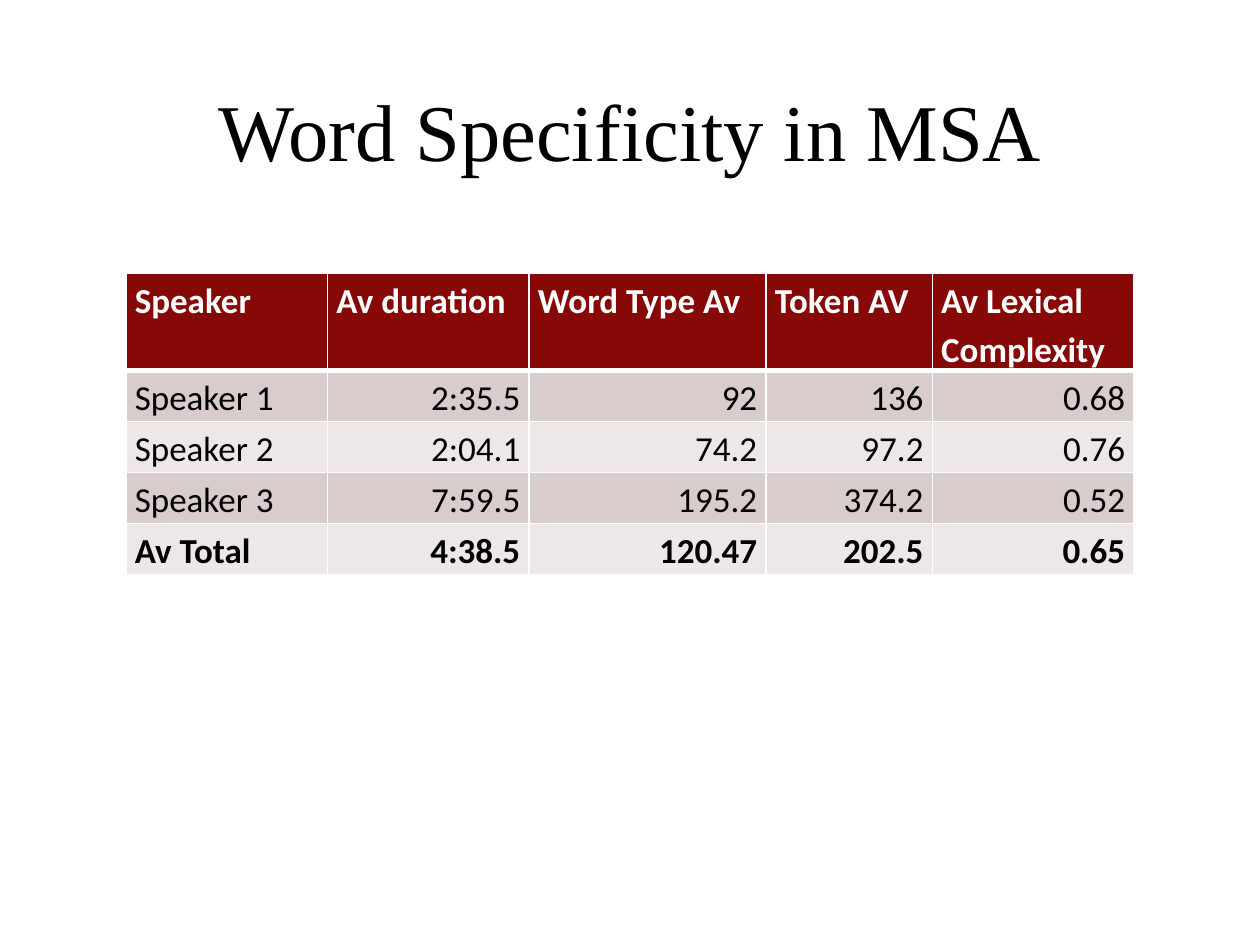
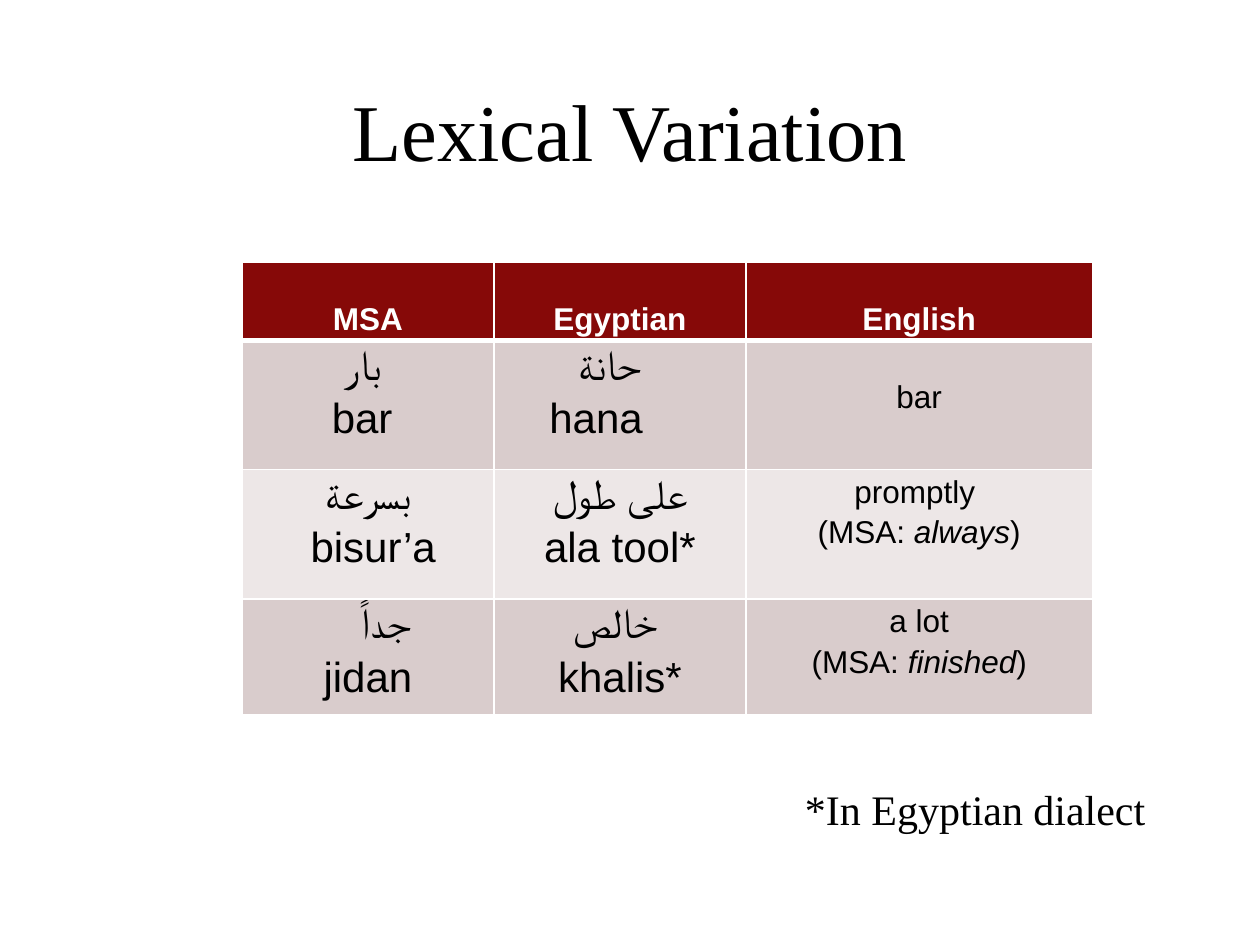
"""Build two slides of word tables that share one title style and one table style."""
from pptx import Presentation as Deck
from pptx.dml.color import RGBColor as Rgb
from pptx.enum.text import MSO_ANCHOR as Anchor, PP_ALIGN as Align
from pptx.oxml import parse_xml as parse
from pptx.oxml.ns import nsdecls
from pptx.util import Inches, Pt

theme = dict(
    ink="000000", white="FFFFFF", head="860908", bands=("D9CCCC", "EDE7E7"),
    serif="Times New Roman", sans="Arial", body="Calibri",
    title=Pt(46), large=Pt(24), mid=Pt(20), small=Pt(18),
    thin=Pt(1), thick=Pt(3), space=1.15,
)
deck = Deck()
wide, high = deck.slide_width, deck.slide_height = Inches(10), Inches(7.5)
col, row = wide / 100, high / 100


def put(frame, lines, look, **box):
    """Write lines into a frame; text between underscores is italic."""
    for key, val in box.items():
        setattr(frame, key, val)
    for num, (text, more) in enumerate(lines):
        para = frame.add_paragraph() if num else frame.paragraphs[0]
        form = {**look, **more}
        for key in ("alignment", "line_spacing"):
            setattr(para, key, form.get(key))
        for key in ("marL", "rtl"):
            if key in form:
                para._p.get_or_add_pPr().set(key, str(int(form[key])))
        for part, bit in enumerate(text.split("_")):
            run = para.add_run()
            run.text = bit
            for key in ("name", "size", "bold"):
                setattr(run.font, key, form.get(key))
            run.font.italic = part % 2 == 1
            run.font.color.rgb = Rgb.from_string(form["ink"])


def grid(slide, left, top, cols, rows, cells, look):
    """Draw a table whose cells hold (lines, top margin) pairs."""
    spans = [round(n * col) for n in cols], [round(n * row) for n in rows]
    table = slide.shapes.add_table(
        len(rows), len(cols), round(left * col), round(top * row),
        sum(spans[0]), sum(spans[1])).table
    for span, val in zip(table.columns, spans[0]):
        span.width = val
    for span, val in zip(table.rows, spans[1]):
        span.height = val
    for down, line in enumerate(cells):
        head = down == 0
        fill = theme["head"] if head else theme["bands"][(down - 1) % 2]
        tint = dict(ink=theme["white"], bold=True) if head else {}
        for cell, (lines, drop) in zip(table.rows[down].cells, line):
            box = dict(margin_left=Inches(0.07), margin_right=Inches(0.07),
                       margin_top=Inches(drop), margin_bottom=0)
            for key, val in box.items():
                setattr(cell, key, val)
            put(cell.text_frame, lines, {**look, **tint})
            cell.fill.solid()
            cell.fill.fore_color.rgb = Rgb.from_string(fill)
            for spot, side in enumerate("LRTB"):
                bold = (side == "B" and head) or (side == "T" and down == 1)
                size = theme["thick" if bold else "thin"]
                cell._tc.tcPr.insert(spot, parse(
                    f'<a:ln{side} {nsdecls("a")} w="{size}"><a:solidFill>'
                    f'<a:srgbClr val="{theme["white"]}"/></a:solidFill></a:ln{side}>'))


base = dict(ink=theme["ink"], line_spacing=theme["space"], bold=False)
serif = dict(name=theme["serif"], ink=theme["ink"])
slides = []
for name in ("Word Specificity in MSA", "Lexical Variation"):
    slide = deck.slides.add_slide(deck.slide_layouts[6])
    text = slide.shapes.add_textbox(
        round(10 * col), round(7.33 * row), round(80 * col), round(12.67 * row))
    put(text.text_frame, [(name, {})],
        {**serif, "size": theme["title"], "alignment": Align.CENTER},
        word_wrap=True, vertical_anchor=Anchor.MIDDLE)
    slides.append(slide)

stats = [
    ("Speaker", "Av duration", "Word Type Av", "Token AV", "Av Lexical Complexity"),
    ("Speaker 1", "2:35.5", "92", "136", "0.68"),
    ("Speaker 2", "2:04.1", "74.2", "97.2", "0.76"),
    ("Speaker 3", "7:59.5", "195.2", "374.2", "0.52"),
    ("Av Total", "4:38.5", "120.47", "202.5", "0.65"),
]
cells = []
for down, line in enumerate(stats):
    bold = down in (0, len(stats) - 1)
    cells.append([
        ([(text, dict(bold=bold,
                      alignment=Align.RIGHT if down and side else Align.LEFT))], 0)
        for side, text in enumerate(line)])
grid(slides[0], 10, 28.93, (16, 16, 18.8, 13.2, 16), (10.3,) + (5.4,) * 4, cells,
     {**base, "name": theme["body"], "size": theme["mid"]})

drop = 0.27
big = dict(size=theme["large"])
arab = dict(big, name=theme["body"])
left = dict(alignment=Align.LEFT)
rtl = dict(rtl=1)
cells = [
    [([(text, {})], drop) for text in ("MSA", "Egyptian", "English")],
    [([("بار ", arab), ("bar ", big)], 0),
     ([("حانة", {**arab, **left, "marL": Inches(0.6)}),
       ("hana", {**big, **left, "marL": Inches(0.37)})], 0),
     ([("bar", {})], drop)],
    [([("بسرعة", {**arab, **rtl}), ("bisur’a ", {**big, **rtl})], 0),
     ([("على طول", arab), ("ala tool*", big)], 0),
     ([("promptly ", {}), ("(MSA: _always_)", {})], 0)],
    [([("جداً", {**arab, "marL": Inches(0.28)}), ("jidan", big)], 0),
     ([("خالص ", arab), ("khalis*", big)], 0),
     ([("a lot", {}), ("(MSA: _finished_)", {})], 0)],
]
grid(slides[1], 19.2, 27.8, (20, 20, 27.5), (8, 13.7, 13.7, 10.8), cells,
     {**base, "name": theme["sans"], "size": theme["small"],
      "alignment": Align.CENTER})

note = slides[1].shapes.add_textbox(
    round(62.9 * col), round(82.27 * row), round(32.5 * col), round(6.67 * row))
put(note.text_frame, [("*In Egyptian dialect", {})],
    {**serif, "size": theme["large"]}, word_wrap=True)

deck.save("out.pptx")
